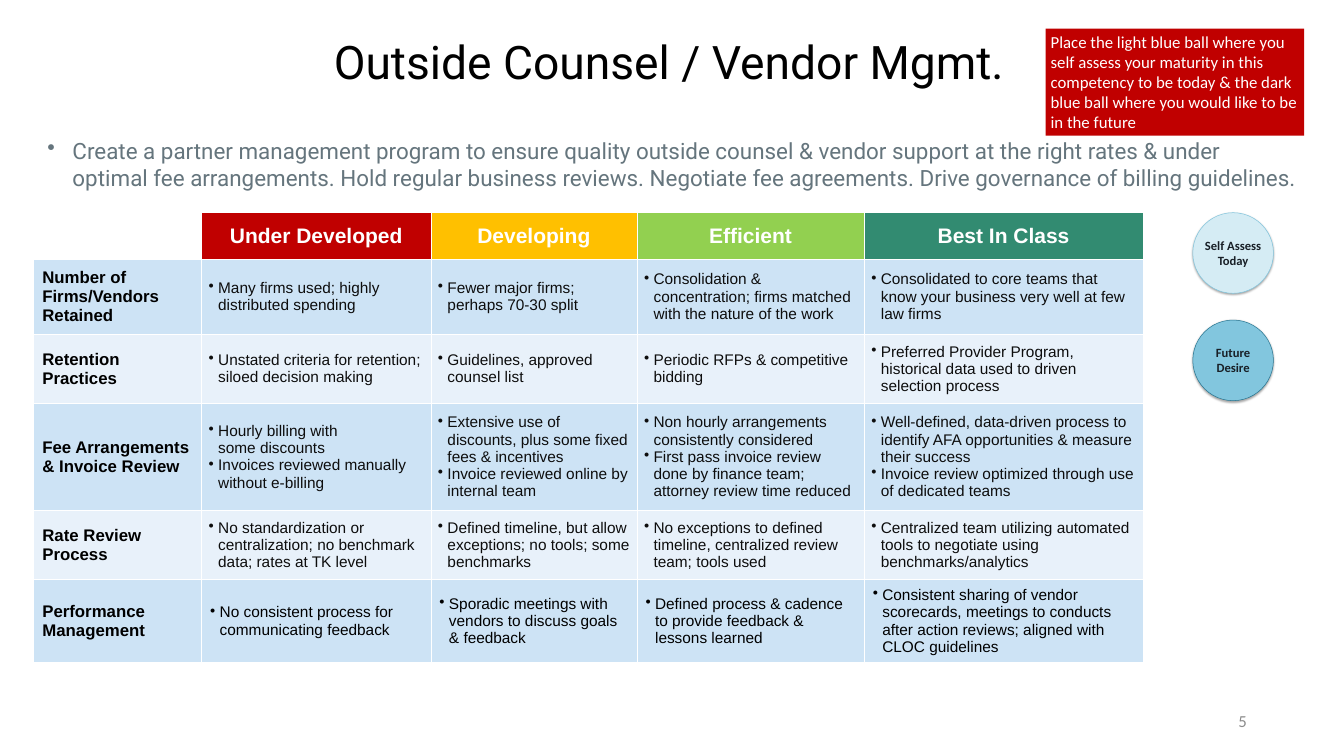
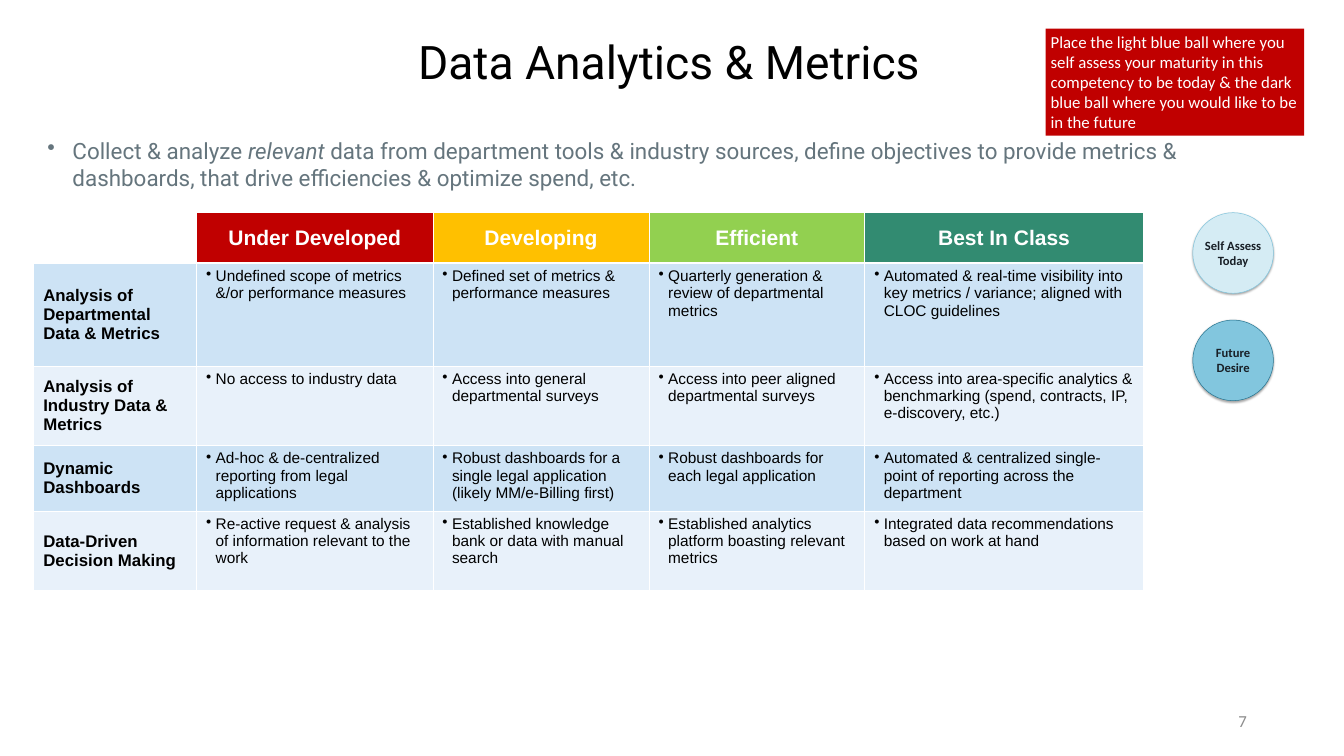
from dataclasses import dataclass
from typing import Any, Optional

import pptx
import pptx.dml.color
import pptx.enum.shapes
import pptx.enum.text
import pptx.oxml
import pptx.oxml.ns
import pptx.util
from pptx.util import Inches

ALIGN = pptx.enum.text.PP_ALIGN
ANCHOR = pptx.enum.text.MSO_ANCHOR
SHAPE = pptx.enum.shapes.MSO_SHAPE


# Theme
@dataclass(frozen=True)
class Theme:
    heading_font: str = "Roboto"
    table_font: str = "Arial"
    note_font: str = "Calibri"
    black: str = "000000"
    soft_black: str = "0D0D0D"
    white: str = "FFFFFF"
    slate: str = "65757D"
    ink: str = "181F26"
    page_gray: str = "8C8C8C"
    red: str = "C00000"
    light_ball: str = "D5ECF4"
    dark_ball: str = "82C6DE"
    dark_outline: str = "277692"
    levels: tuple[str, ...] = ("C00000", "FFC000", "92D050", "328B71")
    bands: tuple[str, ...] = ("CDE3F5", "E8F1FA")
    title_size: int = 66
    summary_size: int = 32
    header_size: int = 30
    label_size: int = 24
    body_size: int = 22
    ball_size: int = 18


THEME = Theme()


@dataclass(frozen=True)
class TextStyle:
    font: str
    size: int
    color: str
    bold: bool = False
    align: Any = ALIGN.LEFT
    indent: float = 0  # hanging indent of a bullet; 0 means no bullet
    space_after: float = 0


@dataclass(frozen=True)
class CellStyle:
    text: TextStyle
    side: float
    end: float
    anchor: Any = ANCHOR.MIDDLE


@dataclass(frozen=True)
class Ball:
    text: str
    top: float
    fill: str
    outline: str


@dataclass(frozen=True)
class Row:
    height: float
    label: str
    cells: tuple[str, ...]
    style: CellStyle


@dataclass(frozen=True)
class Competency:
    title: str
    summary: str  # *asterisks* mark italics
    number: str
    columns: tuple[float, ...]
    header_height: float
    side: float  # side margin of header and label cells
    rows: tuple[Row, ...]


# Text styles
TITLE = TextStyle(THEME.heading_font, THEME.title_size, THEME.black, align=ALIGN.CENTER)
SUMMARY = TextStyle(THEME.heading_font, THEME.summary_size, THEME.slate, indent=0.5)
CALLOUT = TextStyle(THEME.note_font, THEME.label_size, THEME.white)
PAGE_NUMBER = TextStyle(THEME.note_font, THEME.label_size, THEME.page_gray, align=ALIGN.RIGHT)
BALL_TEXT = TextStyle(THEME.note_font, THEME.ball_size, THEME.ink, True, ALIGN.CENTER)
HEADER = TextStyle(THEME.table_font, THEME.header_size, THEME.white, True, ALIGN.CENTER)
LABEL = TextStyle(THEME.table_font, THEME.label_size, THEME.black, True)
BODY = TextStyle(THEME.table_font, THEME.body_size, THEME.black, indent=0.19)
SOFT = TextStyle(THEME.table_font, THEME.body_size, THEME.soft_black, indent=0.19)
SPACED = TextStyle(THEME.table_font, THEME.body_size, THEME.soft_black, indent=0.19, space_after=9.6)

CELL_SPACED = CellStyle(SPACED, 0.14, 0.14)
CELL_LISTED = CellStyle(SOFT, 0.14, 0.14)
CELL_PLAIN = CellStyle(BODY, 0.17, 0.09)
CELL_TOP = CellStyle(BODY, 0.19, 0.09, ANCHOR.TOP)

# Shared content
LEVELS = ("Under Developed", "Developing", "Efficient", "Best In Class")
INSTRUCTION = ("Place the light blue ball where you self assess your maturity in this competency "
               "to be today & the dark blue ball where you would like to be in the future")
BALLS = (
    Ball("Self Assess Today", 4.22, THEME.light_ball, THEME.dark_ball),
    Ball("Future Desire", 6.35, THEME.dark_ball, THEME.dark_outline),
)

# Slide content: \n starts a paragraph, \v breaks a line
COMPETENCIES = (
    Competency(
        "Outside Counsel / Vendor Mgmt.",
        "Create a partner management program to ensure quality outside counsel & vendor support "
        "at the right rates & under optimal fee arrangements. Hold regular business reviews. "
        "Negotiate fee agreements. Drive governance of billing guidelines.",
        "5", (3.33, 4.55, 4.09, 4.51, 5.53), 0.93, 0.17,
        (
            Row(1.48, "Number of Firms/Vendors Retained", (
                "Many firms used; highly distributed spending",
                "Fewer major firms; \vperhaps 70-30 split",
                "Consolidation & concentration; firms matched with the nature of the work",
                "Consolidated to core teams that know your business very well at few law firms",
            ), CELL_SPACED),
            Row(1.04, "Retention Practices", (
                "Unstated criteria for retention; siloed decision making",
                "Guidelines, approved counsel list",
                "Periodic RFPs & competitive bidding",
                "Preferred Provider Program, historical data used to driven selection process",
            ), CELL_SPACED),
            Row(2.01, "Fee Arrangements & Invoice Review", (
                "Hourly billing with \vsome discounts\nInvoices reviewed manually without e-billing",
                "Extensive use of discounts, plus some fixed fees & incentives\n"
                "Invoice reviewed online by internal team",
                "Non hourly arrangements consistently considered\n"
                "First pass invoice review done by finance team; attorney review time reduced",
                "Well-defined, data-driven process to identify AFA opportunities & measure "
                "their success\nInvoice review optimized through use of dedicated teams",
            ), CELL_LISTED),
            Row(1.31, "Rate Review Process", (
                "No standardization or centralization; no benchmark data; rates at TK level",
                "Defined timeline, but allow exceptions; no tools; some benchmarks",
                "No exceptions to defined timeline, centralized review team; tools used",
                "Centralized team utilizing automated tools to negotiate using benchmarks/analytics",
            ), CELL_SPACED),
            Row(1.57, "Performance Management", (
                "No consistent process for communicating feedback",
                "Sporadic meetings with vendors to discuss goals & feedback",
                "Defined process & cadence to provide feedback & lessons learned",
                "Consistent sharing of vendor scorecards, meetings to conducts after action "
                "reviews; aligned with CLOC guidelines",
            ), CELL_PLAIN),
        ),
    ),
    Competency(
        "Data Analytics & Metrics",
        "Collect & analyze *relevant* data from department tools & industry sources, define "
        "objectives to provide metrics & dashboards, that drive efficiencies & optimize spend, etc.",
        "7", (3.23, 4.69, 4.29, 4.28, 5.53), 1, 0.19,
        (
            Row(2.04, "Analysis of Departmental Data & Metrics", (
                "Undefined scope of metrics &/or performance measures",
                "Defined set of metrics & performance measures",
                "Quarterly generation & review of departmental metrics",
                "Automated & real-time visibility into key metrics / variance; aligned with "
                "CLOC guidelines",
            ), CELL_TOP),
            Row(1.58, "Analysis of Industry Data & Metrics", (
                "No access to industry data",
                "Access into general departmental surveys",
                "Access into peer aligned departmental surveys",
                "Access into area-specific analytics & benchmarking (spend, contracts, IP, "
                "e-discovery, etc.)",
            ), CELL_TOP),
            Row(1.3, "Dynamic Dashboards", (
                "Ad-hoc & de-centralized reporting from legal applications",
                "Robust dashboards for a single legal application (likely MM/e-Billing first)",
                "Robust dashboards for each legal application",
                "Automated & centralized single-point of reporting across the department",
            ), CELL_TOP),
            Row(1.58, "Data-Driven Decision Making", (
                "Re-active request & analysis of information relevant to the work",
                "Established knowledge bank or data with manual search",
                "Established analytics platform boasting relevant metrics",
                "Integrated data recommendations based on work at hand",
            ), CELL_TOP),
        ),
    ),
)


# Helpers
def rgb(color: str) -> pptx.dml.color.RGBColor:
    return pptx.dml.color.RGBColor.from_string(color)


def apply(target: Any, values: dict[str, Any]) -> None:
    for name, value in values.items():
        setattr(target, name, value)


def append_xml(parent: Any, tag: str, content: str) -> None:
    parent.append(pptx.oxml.parse_xml(f"<a:{tag} {pptx.oxml.ns.nsdecls('a')} {content}</a:{tag}>"))


def paint(target: Any, color: str) -> None:
    target.fill.solid()
    target.fill.fore_color.rgb = rgb(color)


def write_text(frame: Any, text: str, style: TextStyle) -> None:
    font = {"name": style.font, "size": pptx.util.Pt(style.size), "bold": style.bold}
    for number, content in enumerate(text.split("\n")):
        para = frame.add_paragraph() if number else frame.paragraphs[0]
        if style.indent:
            properties = para._p.get_or_add_pPr()
            properties.set("marL", str(Inches(style.indent)))
            properties.set("indent", str(-Inches(style.indent)))
            append_xml(properties, "buChar", 'char="•">')
        apply(para, {"alignment": style.align, "space_after": pptx.util.Pt(style.space_after)})
        for line_number, line in enumerate(content.split("\v")):
            if line_number:
                para.add_line_break()
            for part_number, part in enumerate(line.split("*")):
                span = para.add_run()
                span.text = part
                apply(span.font, font | {"italic": part_number % 2 == 1})
                span.font.color.rgb = rgb(style.color)


def add_text(page: Any, at: tuple[float, ...], text: str, style: TextStyle, anchor: Any = ANCHOR.TOP,
             margins: tuple[float, float] = (0.1, 0.05), grow: bool = False,
             shape: Any = None, fill: Optional[str] = None) -> Any:
    place = [Inches(value) for value in at]
    if shape is None:
        box = page.shapes.add_textbox(*place)
    else:
        box = page.shapes.add_shape(shape, *place)
        box.shadow.inherit = False
        paint(box, fill)
        box.line.fill.background()
    side, end = (Inches(value) for value in margins)
    sizing = pptx.enum.text.MSO_AUTO_SIZE
    apply(box.text_frame, {
        "word_wrap": True, "vertical_anchor": anchor,
        "auto_size": sizing.SHAPE_TO_FIT_TEXT if grow else sizing.NONE,
        "margin_left": side, "margin_right": side, "margin_top": end, "margin_bottom": end})
    write_text(box.text_frame, text, style)
    return box


def add_ball(page: Any, ball: Ball) -> None:
    circle = add_text(page, (23.67, ball.top, 1.6, 1.6), ball.text, BALL_TEXT, ANCHOR.MIDDLE,
                      (0, 0), shape=SHAPE.OVAL, fill=ball.fill)
    circle.line.color.rgb = rgb(ball.outline)
    circle.line.width = pptx.util.Pt(0.75)
    effects = circle._element.spPr.find(pptx.oxml.ns.qn("a:effectLst"))
    append_xml(effects, "outerShdw",
               f'blurRad="{pptx.util.Pt(3.1)}" dist="{pptx.util.Pt(1.8)}" dir="5400000" rotWithShape="0">'
               f'<a:srgbClr val="{THEME.black}"><a:alpha val="35000"/></a:srgbClr>')


def format_cell(cell: Any, text: str, style: CellStyle, fill: Optional[str], row: int) -> None:
    widths = {"lnL": 1, "lnR": 1, "lnT": 3 if row == 1 else 1, "lnB": 3 if row == 0 else 1}
    for tag, width in widths.items():
        append_xml(cell._tc.get_or_add_tcPr(), tag,
                   f'w="{pptx.util.Pt(width)}"><a:solidFill><a:srgbClr val="{THEME.white}"/></a:solidFill>')
    side, end = Inches(style.side), Inches(style.end)
    apply(cell, {"margin_left": side, "margin_right": side, "margin_top": end,
                 "margin_bottom": end, "vertical_anchor": style.anchor})
    if fill:
        paint(cell, fill)
    else:
        cell.fill.background()
    if text:
        write_text(cell.text_frame, text, style.text)


def add_maturity_table(page: Any, topic: Competency) -> None:
    heights = (topic.header_height, *(row.height for row in topic.rows))
    grid = page.shapes.add_table(len(heights), len(topic.columns), Inches(0.67), Inches(4.22),
                                 Inches(sum(topic.columns)), Inches(sum(heights))).table
    apply(grid, {"first_row": False, "horz_banding": False})
    for column, width in zip(grid.columns, topic.columns):
        column.width = Inches(width)
    for line, height in zip(grid.rows, heights):
        line.height = Inches(height)

    header = CellStyle(HEADER, topic.side, 0.09)
    label = CellStyle(LABEL, topic.side, 0.09)
    for column, (text, fill) in enumerate(zip(("", *LEVELS), (None, *THEME.levels))):
        format_cell(grid.cell(0, column), text, header, fill, 0)
    for number, row in enumerate(topic.rows, 1):
        band = THEME.bands[(number - 1) % 2]
        format_cell(grid.cell(number, 0), row.label, label, band, number)
        for column, text in enumerate(row.cells, 1):
            format_cell(grid.cell(number, column), text, row.style, band, number)


def add_competency(deck: Any, topic: Competency) -> None:
    page = deck.slides.add_slide(deck.slide_layouts[6])
    add_text(page, (18.84, 13.9, 6, 0.8), topic.number, PAGE_NUMBER, ANCHOR.MIDDLE)
    add_text(page, (0.67, 0.74, 25.21, 0.93), topic.title, TITLE, ANCHOR.MIDDLE, (0.27, 0.13))
    add_text(page, (20.75, 0.57, 5.13, 2.12), INSTRUCTION, CALLOUT, grow=True,
             shape=SHAPE.RECTANGLE, fill=THEME.red)
    add_text(page, (0.84, 2.67, 25.04, 1.18), topic.summary, SUMMARY, grow=True)
    for ball in BALLS:
        add_ball(page, ball)
    add_maturity_table(page, topic)


def main() -> None:
    deck = pptx.Presentation()
    apply(deck, {"slide_width": Inches(26.67), "slide_height": Inches(15)})
    for topic in COMPETENCIES:
        add_competency(deck, topic)
    deck.save("out.pptx")


if __name__ == "__main__":
    main()
